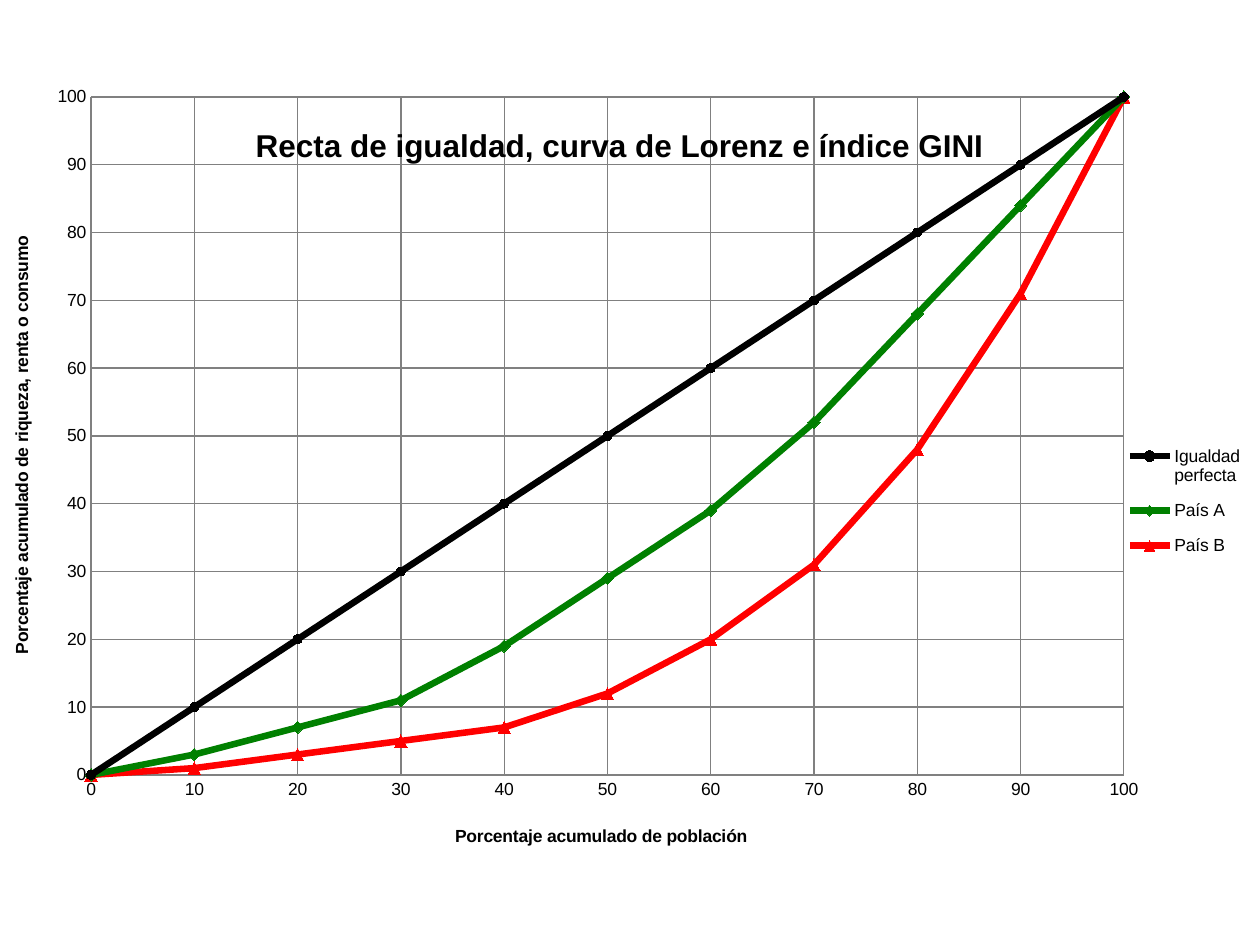
import pptx
import pptx.chart.data
import pptx.dml.color
import pptx.enum.chart
import pptx.oxml
import pptx.oxml.ns
import pptx.util

PX = 914400 // 126
LEFT, TOP, WIDTH, HEIGHT = -5, 86, 1269, 774
GRID = "808080"


def color(text):
    return pptx.dml.color.RGBColor.from_string(text)


def place(element, index, x, y, w=None, h=None):
    """Give a chart part a manual layout, in slide px, as its child at index."""
    for old in element.findall(pptx.oxml.ns.qn("c:layout")):
        element.remove(old)
    values = {"x": (x - LEFT) / WIDTH, "y": (y - TOP) / HEIGHT}
    if w is not None:
        values.update(w=w / WIDTH, h=h / HEIGHT)
    target = '<c:layoutTarget val="inner"/>' if element.tag.endswith("plotArea") else ""
    modes = '<c:xMode val="edge"/><c:yMode val="edge"/>'
    sizes = "".join(f'<c:{k} val="{v:.4f}"/>' for k, v in values.items())
    element.insert(index, pptx.oxml.parse_xml(
        f'<c:layout {pptx.oxml.ns.nsdecls("c")}><c:manualLayout>'
        f"{target}{modes}{sizes}</c:manualLayout></c:layout>"))


prs = pptx.Presentation()
prs.slide_width = pptx.util.Inches(10)
prs.slide_height = pptx.util.Inches(7.5)
s = prs.slides.add_slide(prs.slide_layouts[6])

# Lorenz curves: name, values, line colour, marker style, size and fill
marker = pptx.enum.chart.XL_MARKER_STYLE
curves = [
    ("Igualdad perfecta", range(0, 101, 10), "000000", marker.CIRCLE, 5, "FF0000"),
    ("País A", [0, 3, 7, 11, 19, 29, 39, 52, 68, 84, 100],
     "008000", marker.DIAMOND, 7, "CCFFCC"),
    ("País B", [0, 1, 3, 5, 7, 12, 20, 31, 48, 71, 100],
     "FF0000", marker.TRIANGLE, 7, "FFFF00"),
]
data = pptx.chart.data.XyChartData()
for name, values, *_ in curves:
    series = data.add_series(name)
    for x, y in zip(range(0, 101, 10), values):
        series.add_data_point(x, y)

chart = s.shapes.add_chart(
    pptx.enum.chart.XL_CHART_TYPE.XY_SCATTER_SMOOTH,
    LEFT * PX, TOP * PX, WIDTH * PX, HEIGHT * PX, data).chart
chart.font.name = "Arial"
chart.font.size = pptx.util.Pt(10)
chart.font.color.rgb = color("000000")
chart.plots[0].vary_by_categories = False
place(chart._chartSpace.chart.plotArea, 0, 91, 97, 1033, 678)

for series, (_, _, line, style, size, fill) in zip(chart.plots[0].series, curves):
    series.smooth = True
    series.format.line.color.rgb = color(line)
    series.format.line.width = pptx.util.Pt(3.75)
    series.marker.style = style
    series.marker.size = size
    series.marker.format.fill.solid()
    series.marker.format.fill.fore_color.rgb = color(fill)
    series.marker.format.line.color.rgb = color(line)

axis_format = {
    "minimum_scale": 0,
    "maximum_scale": 100,
    "major_unit": 10,
    "has_major_gridlines": True,
    "major_tick_mark": pptx.enum.chart.XL_TICK_MARK.NONE,
    "minor_tick_mark": pptx.enum.chart.XL_TICK_MARK.NONE,
}
for axis in (chart.category_axis, chart.value_axis):
    for key, value in axis_format.items():
        setattr(axis, key, value)
    for line in (axis.format.line, axis.major_gridlines.format.line):
        line.color.rgb = color(GRID)
        line.width = pptx.util.Pt(0.75)

chart.has_title = True
titles = [
    (chart.chart_title, "Recta de igualdad, curva de Lorenz e índice GINI", 18, 0, 250, 119),
    (chart.category_axis.axis_title, "Porcentaje acumulado de población", 10, 0, 452, 821),
    (chart.value_axis.axis_title, "Porcentaje acumulado de riqueza, renta o consumo",
     10, -90, 7, 233),
]
for title, text, size, angle, x, y in titles:
    tf = title.text_frame
    tf.text = text
    tf._txBody.bodyPr.set("rot", str(angle * 60000))
    font = tf.paragraphs[0].runs[0].font
    font_format = {"name": "Arial", "size": pptx.util.Pt(size), "bold": True}
    for key, value in font_format.items():
        setattr(font, key, value)
    font.color.rgb = color("000000")
    place(title._element, 1, x, y)

chart.has_legend = True
chart.legend.position = pptx.enum.chart.XL_LEGEND_POSITION.RIGHT
chart.legend.include_in_layout = False
place(chart.legend._element, 1, 1125, 431, 120, 140)

prs.save("out.pptx")
